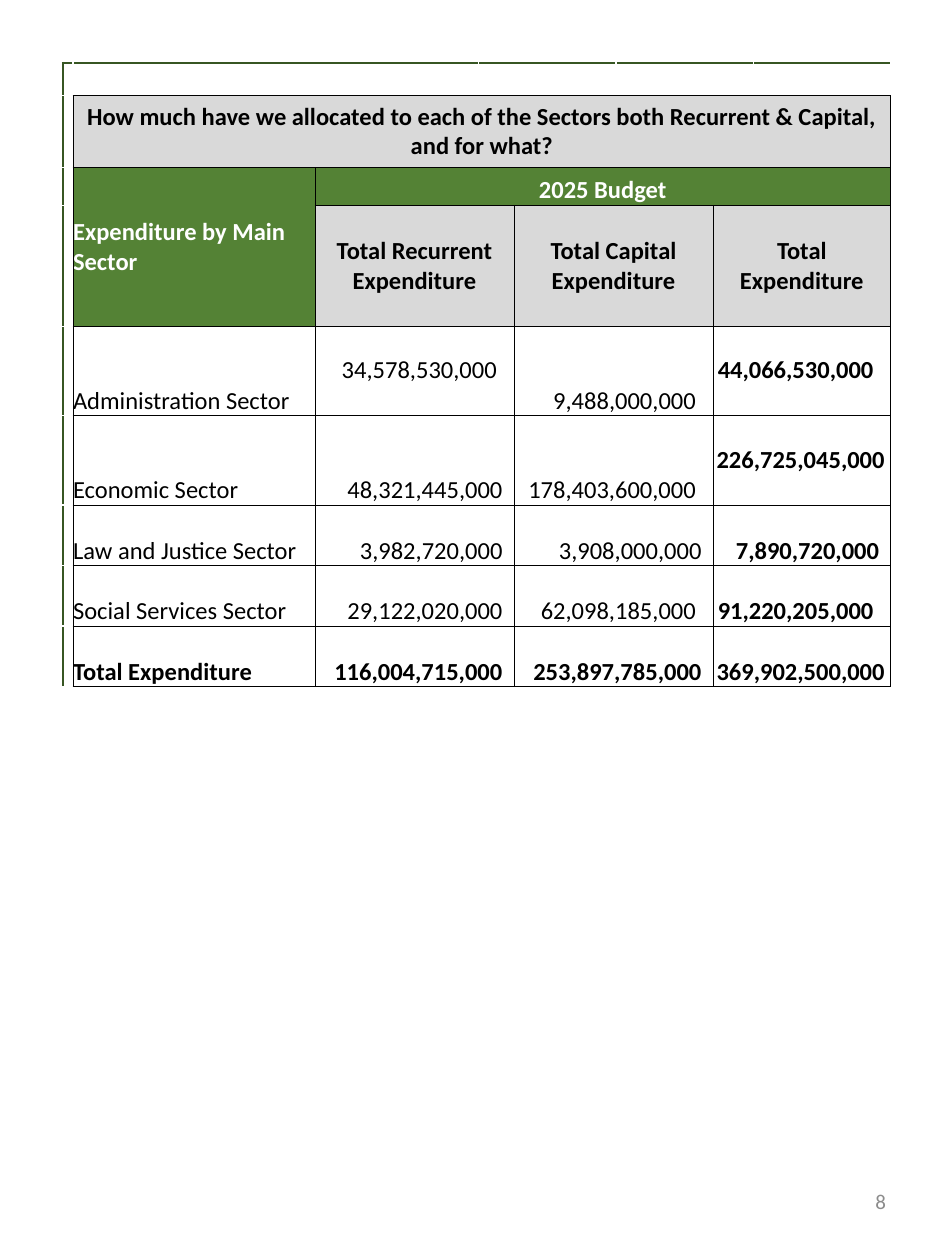
import pptx
import pptx.dml.color
import pptx.enum.text
import pptx.oxml.ns
import pptx.util
from lxml import etree

RGBColor = pptx.dml.color.RGBColor
ALIGN = pptx.enum.text.PP_ALIGN
ANCHOR = pptx.enum.text.MSO_ANCHOR
Inches = pptx.util.Inches
Pt = pptx.util.Pt
qn = pptx.oxml.ns.qn

BLACK = RGBColor(0x00, 0x00, 0x00)
WHITE = RGBColor(0xFF, 0xFF, 0xFF)
GREEN = RGBColor(0x54, 0x82, 0x35)
DARK_GREEN = RGBColor(0x37, 0x56, 0x23)
LIGHT_GREY = RGBColor(0xD9, 0xD9, 0xD9)
NUMBER_GREY = RGBColor(0x8C, 0x8C, 0x8C)

FONT = "Calibri"
BODY_SIZE = 14
COLUMNS = [0.08, 1.92, 1.3, 0.28, 0.81, 0.77, 0.32, 1.09]
ROWS = [0.26, 0.57, 0.3, 0.96, 0.71, 0.71, 0.48, 0.48, 0.48]
AMOUNT_COLUMNS = [2, 4, 6]  # each amount spans two grid columns
FIRST_SECTOR_ROW = 4
INDENT_STEP = 0.045
LINE_HEIGHT = 0.24

COLUMN_HEADS = ["Total Recurrent Expenditure", "Total Capital Expenditure",
                "Total Expenditure"]

# Each amount: figure, right indent in steps, lines raised above the bottom
SECTORS = [
    ("Administration Sector", [("34,578,530,000", 3, 1), ("9,488,000,000", 3, 0),
                               ("44,066,530,000", 3, 1)]),
    ("Economic Sector", [("48,321,445,000", 2, 0), ("178,403,600,000", 3, 0),
                         ("226,725,045,000", 1, 1)]),
    ("Law and Justice Sector", [("3,982,720,000", 2, 0), ("3,908,000,000", 2, 0),
                                ("7,890,720,000", 2, 0)]),
    ("Social Services Sector", [("29,122,020,000", 2, 0), ("62,098,185,000", 3, 0),
                                ("91,220,205,000", 3, 0)]),
    ("Total Expenditure", [("116,004,715,000", 2, 0), ("253,897,785,000", 2, 0),
                           ("369,902,500,000", 1, 0)]),
]


def write(frame, text, size=BODY_SIZE, color=BLACK, bold=False, align=ALIGN.LEFT):
    paragraph = frame.paragraphs[0]
    paragraph.alignment = align
    run = paragraph.add_run()
    run.text = text
    run.font.name = FONT
    run.font.size = Pt(size)
    run.font.bold = bold
    run.font.color.rgb = color


def set_border(cell, side, color=BLACK, width=0.5):
    line = etree.SubElement(cell._tc.get_or_add_tcPr(), qn("a:ln" + side),
                            w=str(Pt(width)))
    fill = etree.SubElement(line, qn("a:solidFill"))
    etree.SubElement(fill, qn("a:srgbClr"), val=str(color))


def prepare_cell(cell, row, column):
    """Zero margins, no fill, and the borders that belong to this grid place."""
    cell.margin_left = cell.margin_right = cell.margin_top = cell.margin_bottom = 0
    if column == 0:
        set_border(cell, "L", DARK_GREEN, 1.5)
        if row > 0:
            set_border(cell, "R")
    elif row > 0:
        set_border(cell, "L")
        set_border(cell, "R")
    if row == 0:
        set_border(cell, "T", DARK_GREEN, 1.5)
    elif column > 0:
        set_border(cell, "T")
    if column > 0:
        set_border(cell, "B")
    cell.fill.background()
    # Keeps empty cells from growing their row
    etree.SubElement(cell.text_frame.paragraphs[0]._p, qn("a:endParaRPr"),
                     sz=str(BODY_SIZE * 100))


def fill_cell(cell, text, fill=None, anchor=ANCHOR.MIDDLE, **text_format):
    cell.vertical_anchor = anchor
    if fill is not None:
        cell.fill.solid()
        cell.fill.fore_color.rgb = fill
    write(cell.text_frame, text, **text_format)


def add_grid(slide):
    frame = slide.shapes.add_table(len(ROWS), len(COLUMNS), Inches(0.5), Inches(0.5),
                                   Inches(sum(COLUMNS)), Inches(sum(ROWS)))
    grid = frame.table
    grid.first_row = grid.horz_banding = False
    for column, width in zip(grid.columns, COLUMNS):
        column.width = Inches(width)
    for row, height in zip(grid.rows, ROWS):
        row.height = Inches(height)
    for row in range(len(ROWS)):
        for column in range(len(COLUMNS)):
            prepare_cell(grid.cell(row, column), row, column)
    return grid


def merge_cells(grid):
    last = len(COLUMNS) - 1
    for column in (1, 3, 5):
        grid.cell(0, column).merge(grid.cell(0, column + 1))
    grid.cell(1, 1).merge(grid.cell(1, last))
    grid.cell(2, 1).merge(grid.cell(3, 1))
    grid.cell(2, 2).merge(grid.cell(2, last))
    for row in range(3, len(ROWS)):
        for column in AMOUNT_COLUMNS:
            grid.cell(row, column).merge(grid.cell(row, column + 1))


def fill_headings(grid):
    fill_cell(grid.cell(1, 1),
              "How much have we allocated to each of the Sectors both "
              "Recurrent & Capital, and for what?",
              fill=LIGHT_GREY, bold=True, align=ALIGN.CENTER)
    fill_cell(grid.cell(2, 1), "Expenditure by Main Sector",
              fill=GREEN, color=WHITE, bold=True)
    fill_cell(grid.cell(2, 2), "2025 Budget", fill=GREEN, anchor=ANCHOR.BOTTOM,
              color=WHITE, bold=True, align=ALIGN.CENTER)
    for column, head in zip(AMOUNT_COLUMNS, COLUMN_HEADS):
        fill_cell(grid.cell(3, column), head, fill=LIGHT_GREY, bold=True,
                  align=ALIGN.CENTER)


def fill_sectors(grid):
    for row, (sector, amounts) in enumerate(SECTORS, FIRST_SECTOR_ROW):
        is_total = row == len(ROWS) - 1
        fill_cell(grid.cell(row, 1), sector, anchor=ANCHOR.BOTTOM, bold=is_total)
        for column, (amount, indent, raised) in zip(AMOUNT_COLUMNS, amounts):
            cell = grid.cell(row, column)
            cell.margin_right = Inches(indent * INDENT_STEP)
            cell.margin_bottom = Inches(raised * LINE_HEIGHT)
            fill_cell(cell, amount, anchor=ANCHOR.BOTTOM, align=ALIGN.RIGHT,
                      bold=is_total or column == AMOUNT_COLUMNS[-1])


def add_page_number(slide, number):
    box = slide.shapes.add_textbox(Inches(5.38), Inches(9.27), Inches(1.75), Inches(0.53))
    box.text_frame.word_wrap = True
    box.text_frame.vertical_anchor = ANCHOR.MIDDLE
    write(box.text_frame, number, size=12, color=NUMBER_GREY, align=ALIGN.RIGHT)


def main():
    deck = pptx.Presentation()
    deck.slide_width, deck.slide_height = Inches(7.5), Inches(10)
    slide = deck.slides.add_slide(deck.slide_layouts[6])

    # Budget table
    budget = add_grid(slide)
    merge_cells(budget)
    fill_headings(budget)
    fill_sectors(budget)

    # Footer
    add_page_number(slide, "8")
    deck.save("out.pptx")


if __name__ == "__main__":
    main()
